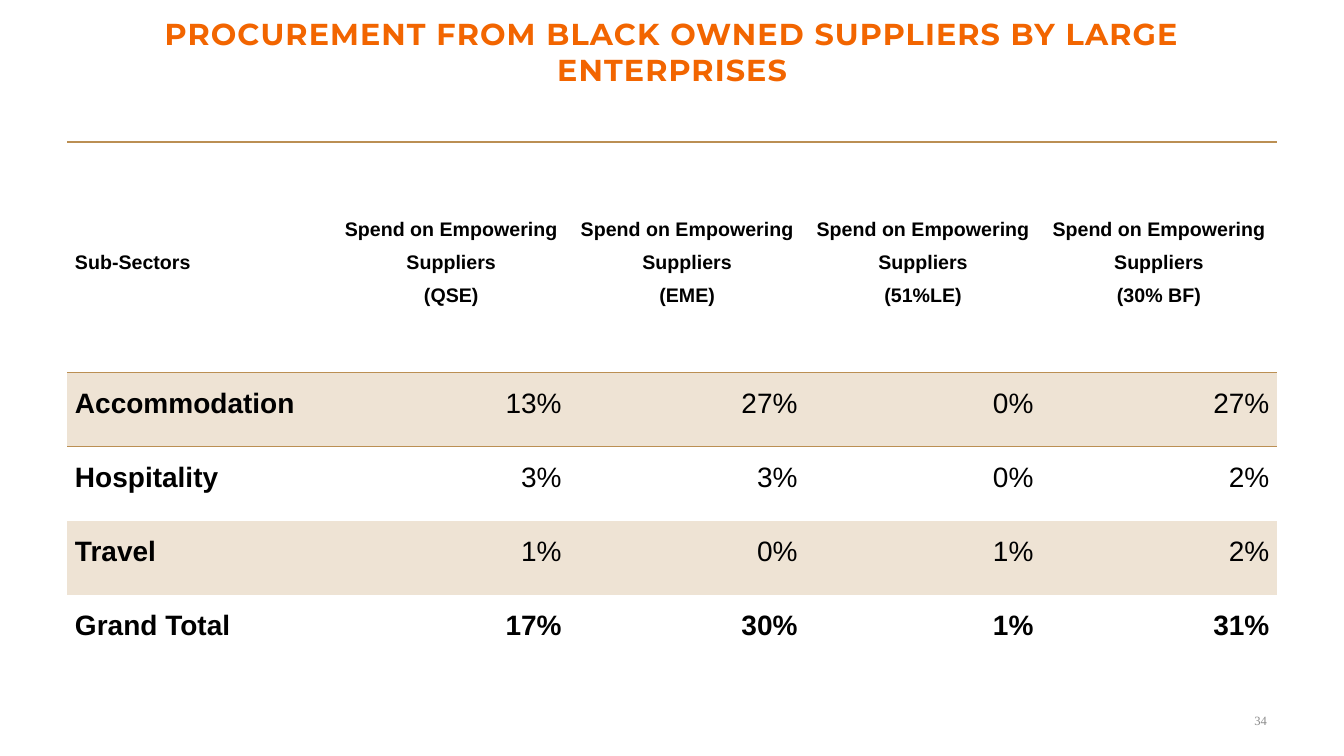
from dataclasses import dataclass

from lxml.etree import SubElement
from pptx import Presentation
from pptx.dml.color import RGBColor as RGB
from pptx.enum.text import MSO_ANCHOR as ANCHOR, MSO_AUTO_SIZE as FIT, PP_ALIGN as ALIGN
from pptx.oxml.ns import qn
from pptx.util import Cm, Pt


@dataclass(frozen=True)
class Theme:
    orange: str = "F26500"
    black: str = "000000"
    gold: str = "BB8F53"
    sand: str = "EEE3D4"
    grey: str = "8C8C8C"
    title_size: float = 21.6
    header_size: float = 14
    figure_size: float = 20
    number_size: float = 9


THEME = Theme()


def write(paragraph, text, font, size, color, bold=False, align=ALIGN.LEFT):
    paragraph.alignment = align
    run = paragraph.add_run()
    run.text = text
    for name, value in {"name": font, "size": Pt(size), "bold": bold}.items():
        setattr(run.font, name, value)
    run.font.color.rgb = RGB.from_string(color)
    return run


def rule(cell, side):
    line = SubElement(cell._tc.get_or_add_tcPr(), qn(f"a:{side}"), w=str(Pt(1)))
    fill = SubElement(line, qn("a:solidFill"))
    SubElement(fill, qn("a:srgbClr"), val=THEME.gold)


deck = Presentation()
deck.slide_width, deck.slide_height = Cm(33.87), Cm(19.05)
slide = deck.slides.add_slide(deck.slide_layouts[5])

heading = slide.shapes.title
heading_place = {"left": Cm(1.7), "top": Cm(0.76), "width": Cm(30.48), "height": Cm(2.26)}
for name, value in heading_place.items():
    setattr(heading, name, value)
heading_format = {
    "word_wrap": True, "auto_size": FIT.NONE, "vertical_anchor": ANCHOR.MIDDLE,
    "margin_top": Cm(0.13), "margin_bottom": Cm(1.33),
}
for name, value in heading_format.items():
    setattr(heading.text_frame, name, value)
heading_words = write(
    heading.text_frame.paragraphs[0],
    "PROCUREMENT FROM BLACK OWNED SUPPLIERS BY LARGE ENTERPRISES",
    "Montserrat", THEME.title_size, THEME.orange, True, ALIGN.CENTER,
)
heading_words.font._element.set("spc", "80")

supplier_groups = ["QSE", "EME", "51%LE", "30% BF"]
spending = [
    ["Sub-Sectors"] + [f"Spend on Empowering Suppliers\n({group})" for group in supplier_groups],
    ["Accommodation", "13%", "27%", "0%", "27%"],
    ["Hospitality", "3%", "3%", "0%", "2%"],
    ["Travel", "1%", "0%", "1%", "2%"],
    ["Grand Total", "17%", "30%", "1%", "31%"],
]
column_widths = [6.7] + [5.945] * 4
row_heights = [5.8] + [1.87] * 4
spend_table = slide.shapes.add_table(
    5, 5, Cm(1.7), Cm(3.58), Cm(sum(column_widths)), Cm(sum(row_heights))
).table
spend_table.first_row = spend_table.horz_banding = False
spend_table._tbl.tblPr.find(qn("a:tableStyleId")).text = "{2D5ABB26-0587-4C30-8999-92F81FD0307C}"
for column, width in zip(spend_table.columns, column_widths):
    column.width = Cm(width)

cell_margins = {
    "margin_left": Cm(0.19), "margin_right": Cm(0.19), "margin_top": 0, "margin_bottom": 0,
}
for r, sector in enumerate(spending):
    spend_table.rows[r].height = Cm(row_heights[r])
    header = r == 0
    for c, entry in enumerate(sector):
        cell = spend_table.cell(r, c)
        for name, value in cell_margins.items():
            setattr(cell, name, value)
        cell.vertical_anchor = ANCHOR.MIDDLE if header else ANCHOR.TOP
        if r < 2:
            rule(cell, "lnT")
        if header:
            rule(cell, "lnB")
        if r % 2:
            cell.fill.solid()
            cell.fill.fore_color.rgb = RGB.from_string(THEME.sand)
        else:
            cell.fill.background()
        align = ALIGN.LEFT if c == 0 else ALIGN.CENTER if header else ALIGN.RIGHT
        size = THEME.header_size if header else THEME.figure_size
        bold = c == 0 or r in (0, 4)
        for i, words in enumerate(entry.split("\n")):
            paragraph = cell.text_frame.add_paragraph() if i else cell.text_frame.paragraphs[0]
            paragraph.line_spacing = 1.5
            write(paragraph, words, "Arial", size, THEME.black, bold, align)

page_number = slide.shapes.add_textbox(Cm(24.28), Cm(17.65), Cm(7.9), Cm(1.02)).text_frame
page_number.word_wrap = True
page_number.vertical_anchor = ANCHOR.MIDDLE
write(page_number.paragraphs[0], "34", "Times New Roman", THEME.number_size, THEME.grey,
      align=ALIGN.RIGHT)

deck.save("out.pptx")
